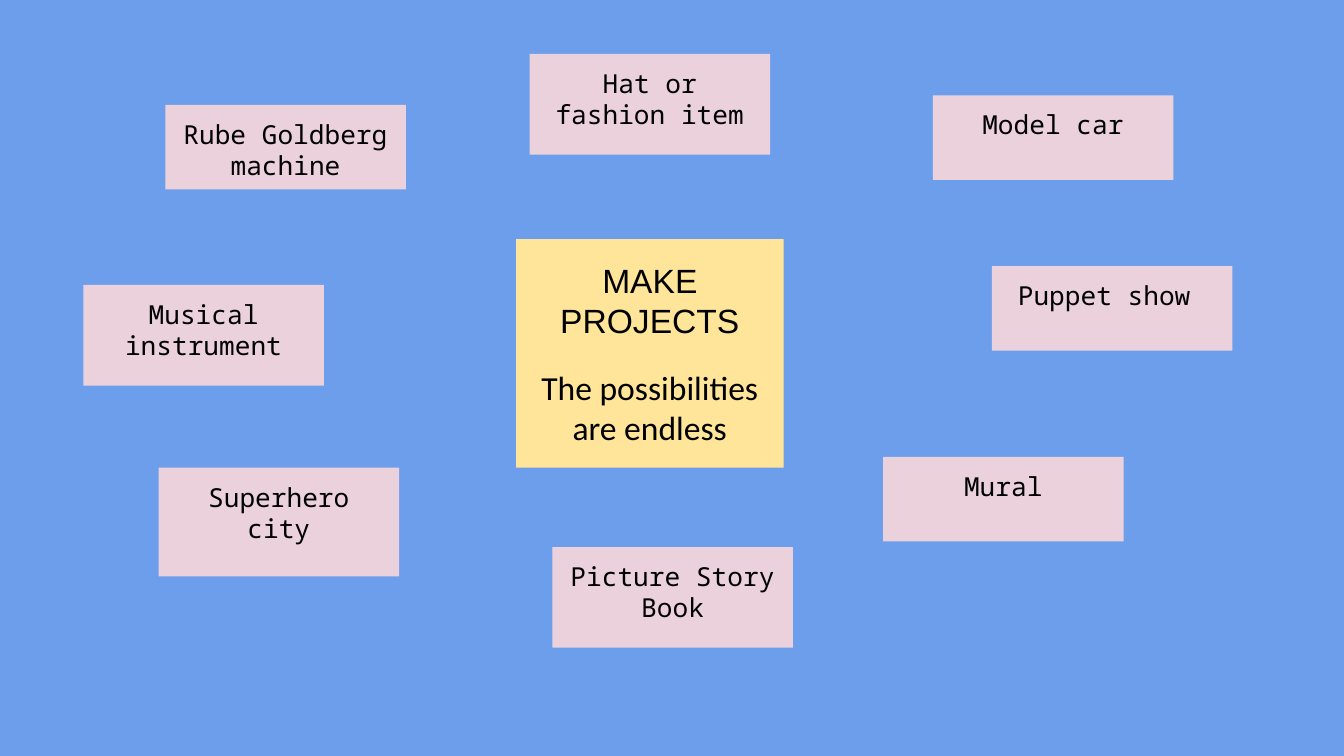
from dataclasses import dataclass

from lxml import etree
from pptx import Presentation
from pptx.dml.color import RGBColor
from pptx.enum.shapes import MSO_SHAPE
from pptx.enum.text import MSO_ANCHOR, MSO_AUTO_SIZE, PP_ALIGN
from pptx.oxml.ns import qn
from pptx.util import Inches, Pt

RECTANGLE = MSO_SHAPE.RECTANGLE
TOP, MIDDLE = MSO_ANCHOR.TOP, MSO_ANCHOR.MIDDLE
CENTER = PP_ALIGN.CENTER
NO_AUTOFIT = MSO_AUTO_SIZE.NONE

COLORS = {
    "background": "6D9EEB",
    "hub": "FFE599",
    "idea": "EAD1DC",
    "text": "000000",
}
SLIDE_WIDTH = 10
SLIDE_HEIGHT = SLIDE_WIDTH * 9 / 16
IDEA_WIDTH = 1.79
INSET = 0.1


@dataclass
class Idea:
    label: str
    left: float
    top: float
    height: float = 0.63


IDEAS = [
    Idea("Rube Goldberg machine", 1.23, 0.78),
    Idea("Hat or fashion item", 3.94, 0.4, 0.75),
    Idea("Superhero city", 1.18, 3.48, 0.81),
    Idea("Picture Story Book", 4.11, 4.07, 0.75),
    Idea("Mural", 6.57, 3.4),
    Idea("Puppet show ", 7.38, 1.98),
    Idea("Model car", 6.94, 0.71),
    Idea("Musical instrument", 0.62, 2.12, 0.75),
]


def paint(fill, color: str) -> None:
    fill.solid()
    fill.fore_color.rgb = RGBColor.from_string(COLORS[color])


def set_up_frame(frame, anchor) -> None:
    frame.word_wrap = True
    frame.auto_size = NO_AUTOFIT
    frame.vertical_anchor = anchor
    frame.margin_left = frame.margin_right = Inches(INSET)
    frame.margin_top = frame.margin_bottom = Inches(INSET)


def write(paragraph, text: str, font_name: str, size: int, gap: int = 0) -> None:
    paragraph.text = text
    paragraph.alignment = CENTER
    paragraph.space_before = Pt(gap)
    paragraph.font.name = font_name
    paragraph.font.size = Pt(size)
    paragraph.font.color.rgb = RGBColor.from_string(COLORS["text"])


def remove_bullet(paragraph) -> None:
    properties = paragraph._p.get_or_add_pPr()
    properties.set("marL", "0")
    properties.set("indent", "0")
    bullet_none = etree.Element(qn("a:buNone"))
    defaults = properties.find(qn("a:defRPr"))
    if defaults is None:
        properties.append(bullet_none)
    else:
        defaults.addprevious(bullet_none)


def draw_hub(hub) -> None:
    hub.left, hub.top = Inches(3.84), Inches(1.78)
    hub.width, hub.height = Inches(1.99), Inches(1.7)
    paint(hub.fill, "hub")
    frame = hub.text_frame
    set_up_frame(frame, MIDDLE)
    heading, tagline = frame.paragraphs[0], frame.add_paragraph()
    write(heading, "MAKE PROJECTS", "Arial", 18)
    write(tagline, "The possibilities are endless", "Calibri", 18, gap=14)
    for paragraph in (heading, tagline):
        remove_bullet(paragraph)


def draw_idea(shapes, idea: Idea) -> None:
    card = shapes.add_shape(RECTANGLE, Inches(idea.left), Inches(idea.top),
                            Inches(IDEA_WIDTH), Inches(idea.height))
    card.shadow.inherit = False
    card.line.fill.background()
    paint(card.fill, "idea")
    set_up_frame(card.text_frame, TOP)
    write(card.text_frame.paragraphs[0], idea.label, "Noto Sans Mono", 14)


def main() -> None:
    presentation = Presentation()
    presentation.slide_width = Inches(SLIDE_WIDTH)
    presentation.slide_height = Inches(SLIDE_HEIGHT)
    slide = presentation.slides.add_slide(presentation.slide_layouts[1])
    paint(slide.background.fill, "background")

    # The slide has no title
    title = slide.shapes.title.element
    title.getparent().remove(title)

    # Central message
    draw_hub(slide.placeholders[1])

    # Project ideas around it
    for idea in IDEAS:
        draw_idea(slide.shapes, idea)

    presentation.save("out.pptx")


if __name__ == "__main__":
    main()
